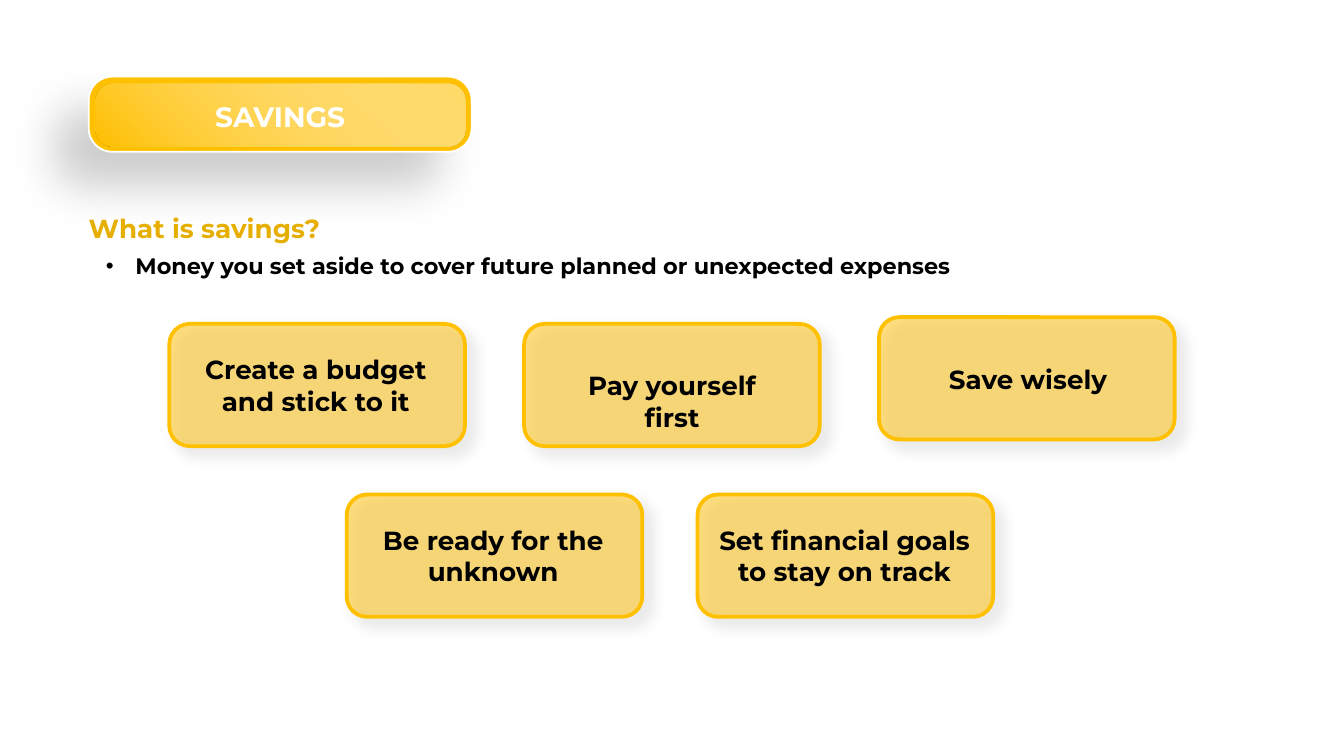
import pptx
import pptx.dml.color
import pptx.enum.shapes
import pptx.enum.text
import pptx.oxml
import pptx.oxml.ns
import pptx.util
from lxml import etree

Inches = pptx.util.Inches
Pt = pptx.util.Pt
Anchor = pptx.enum.text.MSO_ANCHOR
Align = pptx.enum.text.PP_ALIGN
COLORS = {"gold": "FFC000", "heading": "E6AF00", "white": "FFFFFF", "black": "000000"}
FONT = "Montserrat"
SLIDE_WIDTH = 10
CARD_SIZE = (2.2, 0.91)
CARDS = [
    (1.26, 2.41, "Create a budget and stick to it", (0.16, 0.18, 1.86, 0.55)),
    (3.9, 2.41, "Pay yourself first", (0.19, 0.3, 1.82, 0.31)),
    (6.54, 2.36, "Save wisely", (0.18, 0.3, 1.86, 0.31)),
    (2.58, 3.68, "Be ready for the unknown", (0.16, 0.18, 1.86, 0.55)),
    (5.19, 3.68, "Set financial goals to stay on track", (0.07, 0.18, 2.05, 0.55)),
]


def rgb(name):
    """Return the named colour."""
    return pptx.dml.color.RGBColor.from_string(COLORS[name])


def add_element(parent, tag, **attributes):
    """Append a DrawingML child element."""
    return etree.SubElement(parent, pptx.oxml.ns.qn(tag), attributes)


def set_alpha(color_element, percent):
    """Give a colour element an opacity."""
    add_element(color_element, "a:alpha", val=str(percent * 1000))


def add_shadow(shape, opacity, blur, distance, angle):
    """Give a shape an outer shadow, with lengths in points."""
    effects = shape._element.spPr.find(pptx.oxml.ns.qn("a:effectLst"))
    shadow = add_element(effects, "a:outerShdw", blurRad=str(Pt(blur)), dist=str(Pt(distance)),
                         dir=str(angle * 60000), algn="ctr", rotWithShape="0")
    set_alpha(add_element(shadow, "a:srgbClr", val=COLORS["black"]), opacity)


def add_rounded(slide, box, adjustment):
    """Add a shadowless rounded rectangle."""
    shape = slide.shapes.add_shape(pptx.enum.shapes.MSO_SHAPE.ROUNDED_RECTANGLE, *map(Inches, box))
    shape.adjustments[0] = adjustment
    shape.shadow.inherit = False
    return shape


def write(shape, text, size, color, insets=(0.07, 0.04), align=Align.LEFT, anchor=Anchor.TOP):
    """Write one bold paragraph and return it."""
    frame = shape.text_frame
    frame.text = text
    frame.word_wrap = True
    frame.auto_size = pptx.enum.text.MSO_AUTO_SIZE.NONE
    frame.vertical_anchor = anchor
    frame.margin_left = frame.margin_right = Inches(insets[0])
    frame.margin_top = frame.margin_bottom = Inches(insets[1])
    paragraph = frame.paragraphs[0]
    paragraph.alignment = align
    font = paragraph.runs[0].font
    font.name, font.size, font.bold = FONT, Pt(size), True
    font.color.rgb = rgb(color)
    return paragraph


def add_text(slide, box, text, size, color, **options):
    """Add a text box and return its paragraph."""
    return write(slide.shapes.add_textbox(*map(Inches, box)), text, size, color, **options)


def add_title_banner(slide, left, top, width, height):
    """Draw the gold banner and place the title on it."""
    frame = add_rounded(slide, (left, top, width, height), 0.313)
    frame.fill.solid()
    frame.fill.fore_color.rgb = rgb("gold")
    frame.line.color.rgb = rgb("white")
    frame.line.width = Pt(1)
    add_shadow(frame, 20, 25, 25, 135)

    inner_box = (left + 0.05, top + 0.05, width - 0.1, height - 0.09)
    panel = add_rounded(slide, inner_box, 0.283)
    panel.line.fill.background()
    panel.fill.gradient()
    panel.fill.gradient_angle = 45
    for stop, color, position in zip(panel.fill.gradient_stops, ("gold", "white"), (0, 0.97)):
        stop.color.rgb = rgb(color)
        stop.position = position
    set_alpha(panel._element.spPr.findall(".//" + pptx.oxml.ns.qn("a:srgbClr"))[-1], 41)

    title = slide.shapes.title
    title.left, title.top = Inches(left + 0.05), Inches(top + 0.13)
    title.width, title.height = Inches(width - 0.1), Inches(0.33)
    write(title, "SAVINGS", 15, "white", align=Align.CENTER, anchor=Anchor.MIDDLE)
    slide.shapes._spTree.append(title._element)


def add_definition(slide, left, top):
    """Write the question and its bulleted answer."""
    add_text(slide, (left, top, 2.3, 0.24), "What is savings?", 14, "heading",
             insets=(0, 0), anchor=Anchor.MIDDLE)
    paragraph = add_text(slide, (left, top + 0.2, 7.77, 0.4),
                         "Money you set aside to cover future planned or unexpected expenses",
                         12, "black", insets=(0.1, 0.1))
    properties = paragraph._p.get_or_add_pPr()
    properties.set("marL", str(Inches(0.25)))
    properties.set("indent", str(Inches(-0.22)))
    bullet_color = add_element(properties, "a:buClr")
    add_element(bullet_color, "a:srgbClr", val=COLORS["black"])
    add_element(properties, "a:buFont", typeface="Arial")
    add_element(properties, "a:buChar", char="•")


def add_card(slide, left, top, text, text_box):
    """Draw one tip card with its text placed relative to the card."""
    card = add_rounded(slide, (left, top, *CARD_SIZE), 0.167)
    card.fill.solid()
    card.fill.fore_color.rgb = rgb("gold")
    set_alpha(card._element.spPr.find(".//" + pptx.oxml.ns.qn("a:srgbClr")), 50)
    card.line.color.rgb = rgb("gold")
    card.line.width = Pt(2)
    add_shadow(card, 15, 8, 6, 45)
    x, y, width, height = text_box
    add_text(slide, (left + x, top + y, width, height), text, 14, "black", align=Align.CENTER)


def main():
    """Build and save the savings slide."""
    presentation = pptx.Presentation()
    presentation.slide_width = Inches(SLIDE_WIDTH)
    presentation.slide_height = Inches(SLIDE_WIDTH * 9 / 16)
    slide = presentation.slides.add_slide(presentation.slide_layouts[5])
    add_title_banner(slide, 0.66, 0.57, 2.85, 0.56)
    for card in CARDS:
        add_card(slide, *card)
    add_definition(slide, 0.66, 1.58)
    presentation.save("out.pptx")


if __name__ == "__main__":
    main()
